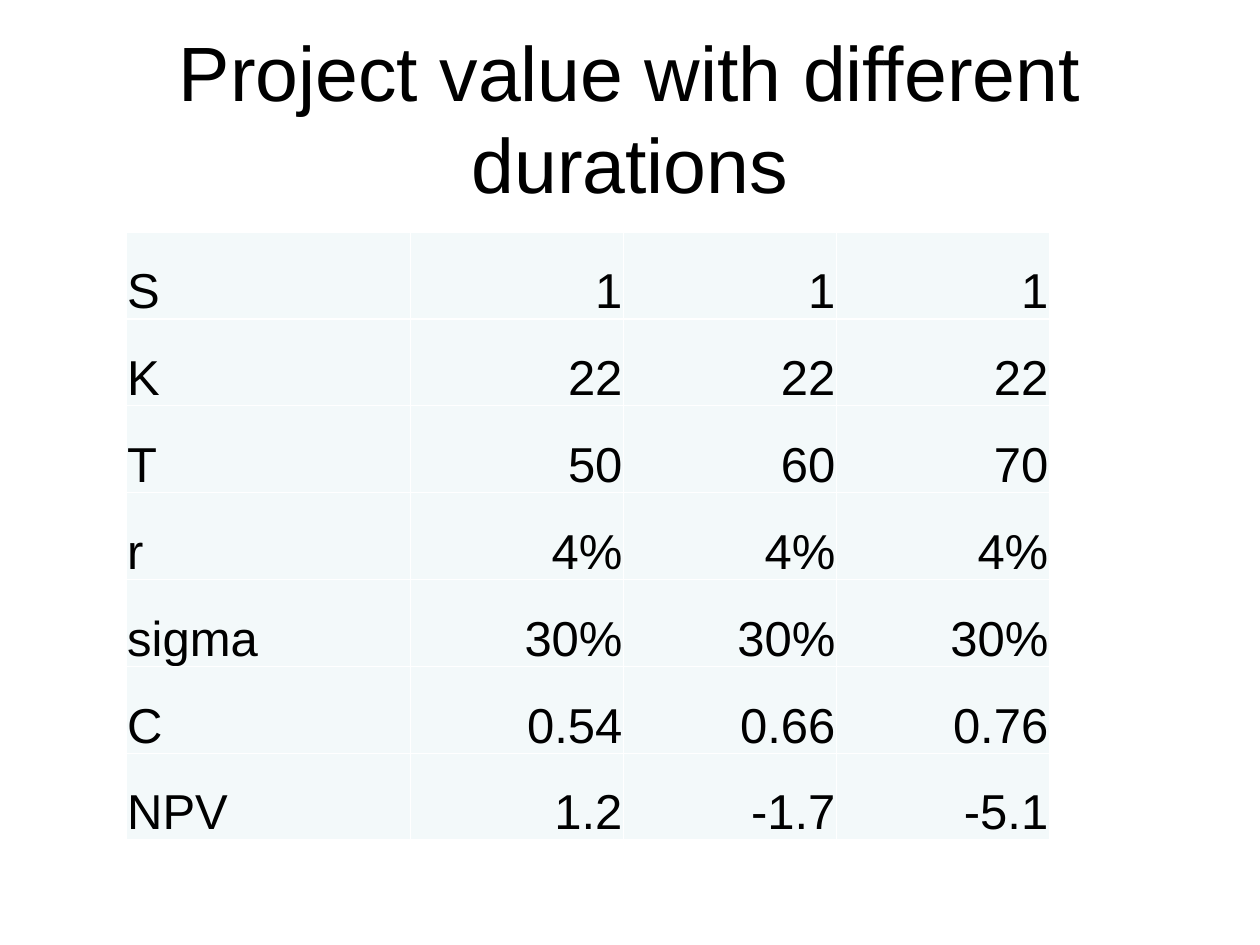
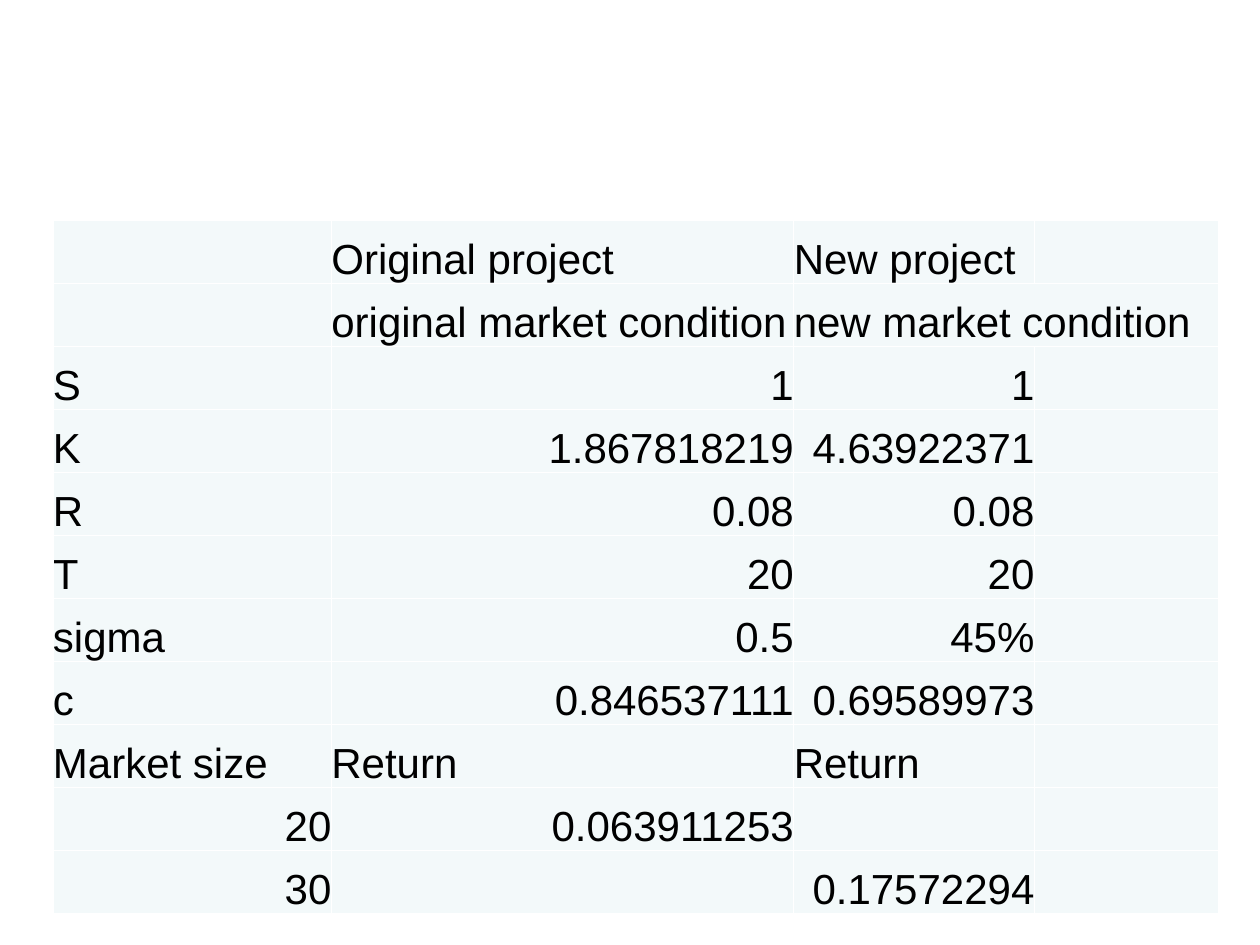
from dataclasses import dataclass

from lxml.etree import SubElement
from pptx import Presentation
from pptx.dml.color import RGBColor
from pptx.enum.text import MSO_ANCHOR, MSO_AUTO_SIZE, PP_ALIGN
from pptx.oxml.ns import qn
from pptx.slide import Slide
from pptx.table import _Cell
from pptx.text.text import TextFrame
from pptx.util import Inches, Pt


@dataclass(frozen=True)
class Theme:
    font: str = "Arial"
    ink: str = "000000"
    paper: str = "FFFFFF"
    tint: str = "F3F9FA"
    rule: float = 1
    title: float = 44
    large: float = 28
    small: float = 24


@dataclass(frozen=True)
class Grid:
    left: float
    top: float
    widths: tuple[float, ...]
    height: float
    size: float
    inset: float
    rows: tuple[tuple[str, ...], ...]
    merges: tuple[tuple[int, int, int], ...] = ()


THEME = Theme()

VALUES = Grid(
    left=1, top=1.84, widths=(2.26, 1.69, 1.69, 1.69), height=0.69,
    size=THEME.large, inset=0.01,
    rows=(
        ("S", "1", "1", "1"),
        ("K", "22", "22", "22"),
        ("T", "50", "60", "70"),
        ("r", "4%", "4%", "4%"),
        ("sigma", "30%", "30%", "30%"),
        ("C", "0.54", "0.66", "0.76"),
        ("NPV", "1.2", "-1.7", "-5.1"),
    ),
)

MARKETS = Grid(
    left=0.42, top=1.75, widths=(2.21, 3.67, 1.91, 1.46), height=0.5,
    size=THEME.small, inset=0,
    rows=(
        ("", "Original project", "New project", ""),
        ("", "original market condition", "new market condition", ""),
        ("S", "1", "1", ""),
        ("K", "1.867818219", "4.63922371", ""),
        ("R", "0.08", "0.08", ""),
        ("T", "20", "20", ""),
        ("sigma", "0.5", "45%", ""),
        ("c", "0.846537111", "0.69589973", ""),
        ("Market size", "Return", "Return", ""),
        ("20", "0.063911253", "", ""),
        ("30", "", "0.17572294", ""),
    ),
    merges=((1, 2, 3),),
)


def write(frame: TextFrame, text: str, *, size: float, align: PP_ALIGN) -> None:
    line = frame.paragraphs[0]
    line.alignment = align
    run = line.add_run()
    run.text = text
    run.font.name = THEME.font
    run.font.size = Pt(size)
    run.font.color.rgb = RGBColor.from_string(THEME.ink)


def border(cell: _Cell) -> None:
    props = cell._tc.get_or_add_tcPr()
    for side in ("lnL", "lnR", "lnT", "lnB"):
        line = SubElement(props, qn(f"a:{side}"), w=str(Pt(THEME.rule)))
        fill = SubElement(line, qn("a:solidFill"))
        SubElement(fill, qn("a:srgbClr"), val=THEME.paper)


def style(cell: _Cell, inset: float) -> None:
    border(cell)
    cell.fill.solid()
    cell.fill.fore_color.rgb = RGBColor.from_string(THEME.tint)
    cell.vertical_anchor = MSO_ANCHOR.BOTTOM
    cell.margin_left = cell.margin_right = cell.margin_top = Inches(inset)
    cell.margin_bottom = Inches(0)


def draw_grid(slide: Slide, grid: Grid) -> None:
    count = len(grid.rows)
    table = slide.shapes.add_table(
        count, len(grid.widths), Inches(grid.left), Inches(grid.top),
        Inches(sum(grid.widths)), Inches(grid.height * count),
    ).table
    table.first_row = table.horz_banding = False
    for column, width in zip(table.columns, grid.widths):
        column.width = Inches(width)
    for r, texts in enumerate(grid.rows):
        table.rows[r].height = Inches(grid.height)
        for c, text in enumerate(texts):
            cell = table.cell(r, c)
            style(cell, grid.inset)
            if text:
                digits = any(mark.isdigit() for mark in text)
                align = PP_ALIGN.RIGHT if digits else PP_ALIGN.LEFT
                write(cell.text_frame, text, size=grid.size, align=align)
    for row, first, last in grid.merges:
        table.cell(row, first).merge(table.cell(row, last))


def draw_title(slide: Slide, text: str) -> None:
    title = slide.shapes.title
    title.left, title.top = Inches(0.5), Inches(0.3)
    title.width, title.height = Inches(9), Inches(1.25)
    frame = title.text_frame
    frame.word_wrap = True
    frame.auto_size = MSO_AUTO_SIZE.NONE
    frame.vertical_anchor = MSO_ANCHOR.MIDDLE
    write(frame, text, size=THEME.title, align=PP_ALIGN.CENTER)


def main() -> None:
    deck = Presentation()
    deck.slide_width, deck.slide_height = Inches(10), Inches(7.5)
    titled, blank = deck.slide_layouts[5], deck.slide_layouts[6]

    slide = deck.slides.add_slide(titled)
    draw_title(slide, "Project value with different durations")
    draw_grid(slide, VALUES)

    draw_grid(deck.slides.add_slide(blank), MARKETS)
    deck.save("out.pptx")


if __name__ == "__main__":
    main()
